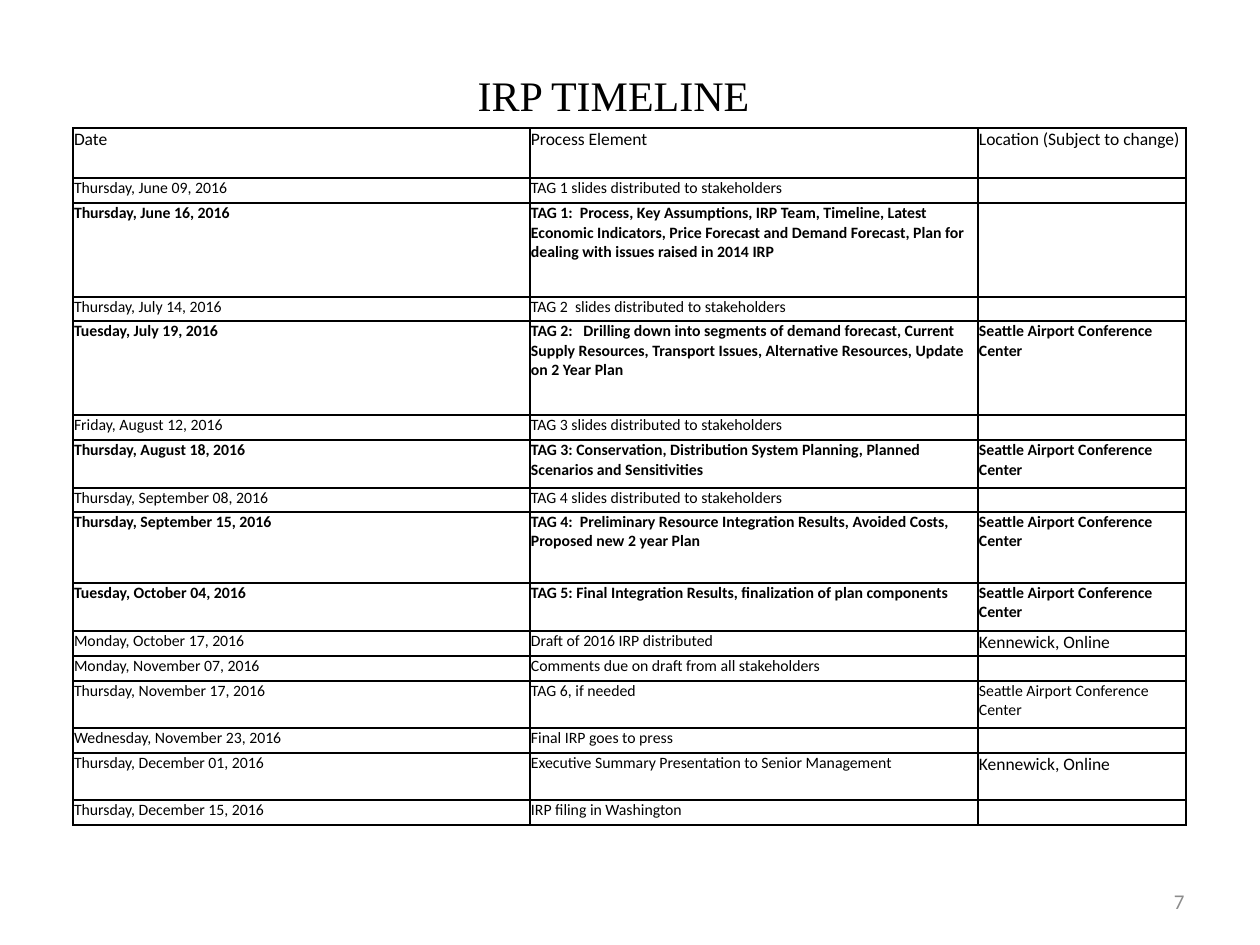
from pptx import Presentation
from pptx.dml.color import RGBColor
from pptx.enum.text import MSO_ANCHOR, PP_ALIGN
from pptx.oxml.ns import qn
from pptx.util import Emu, Pt
from lxml import etree

PX = 7257.6  # EMU per px, 126 px to the inch
BLACK = RGBColor(0x00, 0x00, 0x00)
GRAY = RGBColor(0x8C, 0x8C, 0x8C)
CENTER, RIGHT = PP_ALIGN.CENTER, PP_ALIGN.RIGHT
TOP, MIDDLE = MSO_ANCHOR.TOP, MSO_ANCHOR.MIDDLE
BODY_FONT, TITLE_FONT = "Calibri", "Times New Roman"
HEADER_SIZE, BODY_SIZE = 10, 9

AIRPORT = "Seattle Airport Conference Center"
REMOTE = "Kennewick, Online"
COLUMN_WIDTHS = (457, 448, 208)
HEADERS = ("Date", "Process Element", "Location (Subject to change)")
HEADER_HEIGHT = 50

# row height, bold, date, process element, location
MILESTONES = [
    (25, False, "Thursday, June 09, 2016", "TAG 1 slides distributed to stakeholders", ""),
    (94, True, "Thursday, June 16, 2016",
     "TAG 1:  Process, Key Assumptions, IRP Team, Timeline, Latest Economic Indicators, "
     "Price Forecast and Demand Forecast, Plan for dealing with issues raised in 2014 IRP", ""),
    (24, False, "Thursday, July 14, 2016", "TAG 2  slides distributed to stakeholders", ""),
    (94, True, "Tuesday, July 19, 2016",
     "TAG 2:   Drilling down into segments of demand forecast, Current Supply Resources, "
     "Transport Issues, Alternative Resources, Update on 2 Year Plan", AIRPORT),
    (25, False, "Friday, August 12, 2016", "TAG 3 slides distributed to stakeholders", ""),
    (48, True, "Thursday, August 18, 2016",
     "TAG 3: Conservation, Distribution System Planning, Planned Scenarios and Sensitivities",
     AIRPORT),
    (24, False, "Thursday, September 08, 2016", "TAG 4 slides distributed to stakeholders", ""),
    (71, True, "Thursday, September 15, 2016",
     "TAG 4:  Preliminary Resource Integration Results, Avoided Costs, Proposed new 2 year Plan",
     AIRPORT),
    (48, True, "Tuesday, October 04, 2016",
     "TAG 5: Final Integration Results, finalization of plan components", AIRPORT),
    (25, False, "Monday, October 17, 2016", "Draft of 2016 IRP distributed", REMOTE),
    (25, False, "Monday, November 07, 2016", "Comments due on draft from all stakeholders", ""),
    (47, False, "Thursday, November 17, 2016", "TAG 6, if needed", AIRPORT),
    (25, False, "Wednesday, November 23, 2016", "Final IRP goes to press", ""),
    (47, False, "Thursday, December 01, 2016",
     "Executive Summary Presentation to Senior Management", REMOTE),
    (25, False, "Thursday, December 15, 2016", "IRP filing in Washington", ""),
]


def px(length):
    return Emu(round(length * PX))


class TimelineSlide:
    def __init__(self, prs):
        self.slide = prs.slides.add_slide(prs.slide_layouts[6])

    def style(self, paragraph, size, font=BODY_FONT, color=BLACK, bold=False):
        paragraph.font.name = font
        paragraph.font.size = Pt(size)
        paragraph.font.bold = bold
        paragraph.font.color.rgb = color

    def text(self, box, words, size, align, anchor=TOP, **look):
        frame = self.slide.shapes.add_textbox(*map(px, box)).text_frame
        frame.word_wrap = True
        frame.vertical_anchor = anchor
        paragraph = frame.paragraphs[0]
        paragraph.text = words
        paragraph.alignment = align
        self.style(paragraph, size, **look)

    def borders(self, cell):
        """Draw a 1 pt black line on all four sides; call before setting the fill."""
        properties = cell._tc.get_or_add_tcPr()
        for side in ("a:lnL", "a:lnR", "a:lnT", "a:lnB"):
            line = etree.SubElement(properties, qn(side), w=str(Pt(1)))
            fill = etree.SubElement(line, qn("a:solidFill"))
            etree.SubElement(fill, qn("a:srgbClr"), val=str(BLACK))

    def cell(self, cell, words, size, bold):
        cell.margin_left = cell.margin_right = cell.margin_top = px(1)
        cell.margin_bottom = 0
        self.borders(cell)
        cell.fill.background()
        paragraph = cell.text_frame.paragraphs[0]
        paragraph.text = words
        self.style(paragraph, size, bold=bold)
        if not words:  # keeps an empty cell from stretching its row
            etree.SubElement(paragraph._p, qn("a:endParaRPr"), sz=str(size * 100))

    def table(self, left, top, widths, rows):
        height = sum(row[0] for row in rows)
        table = self.slide.shapes.add_table(
            len(rows), len(widths), px(left), px(top), px(sum(widths)), px(height)).table
        table.first_row = table.horz_banding = False
        for column, width in zip(table.columns, widths):
            column.width = px(width)
        for index, (row_height, bold, *entries) in enumerate(rows):
            table.rows[index].height = px(row_height)
            for column, words in enumerate(entries):
                large = index == 0 or words == REMOTE
                self.cell(table.cell(index, column), words,
                          HEADER_SIZE if large else BODY_SIZE, bold)


def main():
    prs = Presentation()
    prs.slide_width, prs.slide_height = px(1260), px(945)
    timeline = TimelineSlide(prs)
    timeline.text((903, 876, 294, 50), "7", 12, RIGHT, MIDDLE, color=GRAY)
    timeline.text((73, 63, 1081, 63), "IRP TIMELINE", 24, CENTER, font=TITLE_FONT)
    timeline.table(73, 128, COLUMN_WIDTHS, [(HEADER_HEIGHT, False, *HEADERS), *MILESTONES])
    prs.save("out.pptx")


if __name__ == "__main__":
    main()
